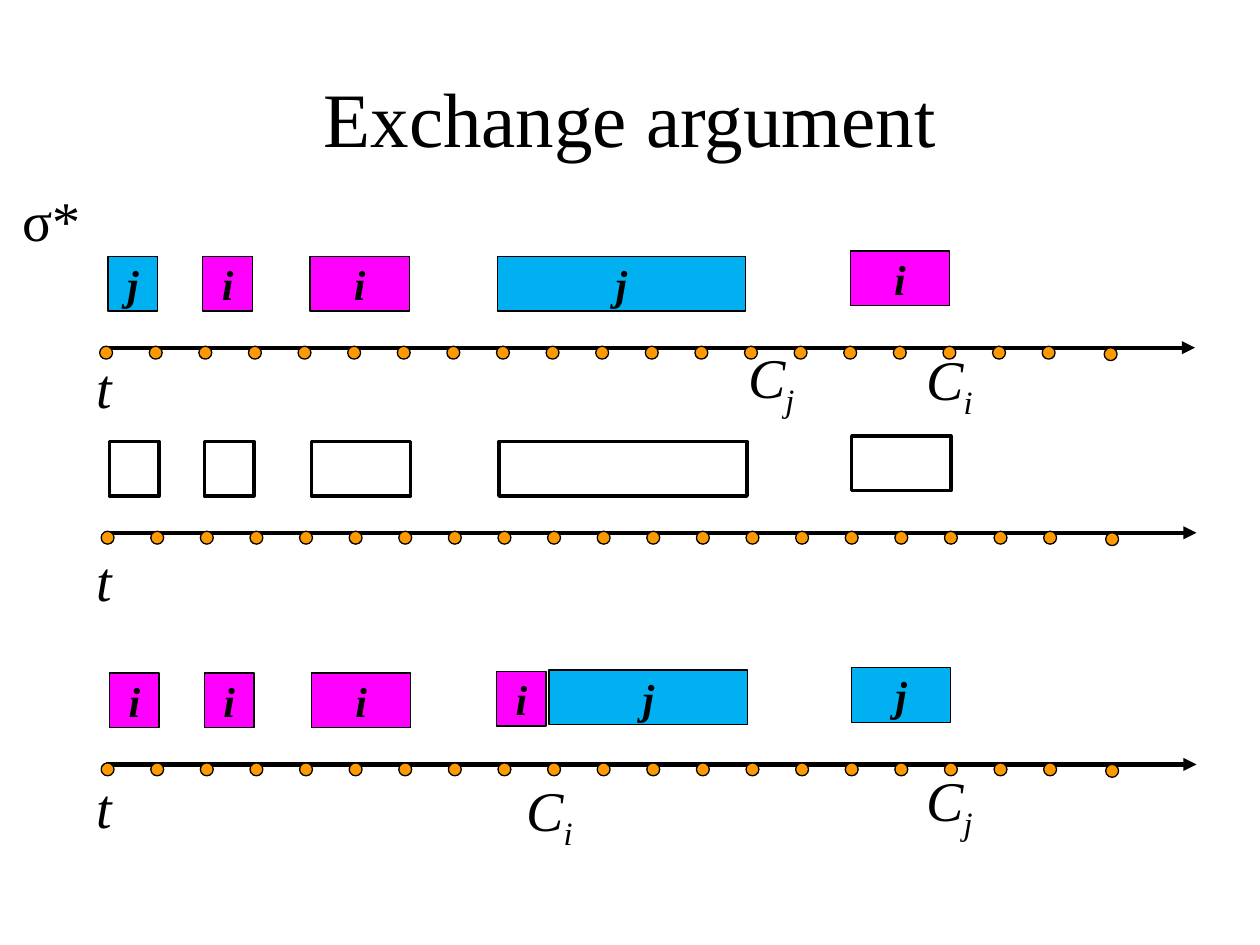
from lxml.etree import SubElement
from pptx import Presentation
from pptx.dml.color import RGBColor
from pptx.enum.shapes import MSO_CONNECTOR as CONNECTOR, MSO_SHAPE as SHAPE
from pptx.enum.text import MSO_ANCHOR as ANCHOR, MSO_AUTO_SIZE as AUTO_SIZE, PP_ALIGN as ALIGN
from pptx.oxml.ns import qn
from pptx.util import Cm, Pt

COLORS = {"ink": "000000", "j": "00B0F0", "i": "FF00FF", "tick": "FF9900"}
FONT = "Times New Roman"
BOX_HEIGHT = 1.1
TICK_SIZE = 0.26
TICK_OFFSETS = [(step, -0.03) for step in range(20)] + [(20.25, 0)]


def color(name):
    """Return the palette colour of the given name."""
    return RGBColor.from_string(COLORS[name])


def write_text(frame, text, size=32, bold=False, italic=False, align=ALIGN.LEFT,
               anchor=ANCHOR.TOP, wrap=False):
    """Write text into a frame, with whatever follows an underscore as a subscript."""
    frame.word_wrap = wrap
    frame.vertical_anchor = anchor
    paragraph = frame.paragraphs[0]
    paragraph.alignment = align
    for position, part in enumerate(text.split("_")):
        run = paragraph.add_run()
        run.text = part
        font = run.font
        font.name, font.size = FONT, Pt(size)
        font.bold, font.italic = bold, italic
        font.color.rgb = color("ink")
        if position:
            font._element.set("baseline", "-25000")


def add_label(slide, text, left, top, width, italic=True):
    """Add a text box that fits its single line."""
    box = slide.shapes.add_textbox(Cm(left), Cm(top), Cm(width), Cm(1.62))
    write_text(box.text_frame, text, italic=italic)
    box.text_frame.auto_size = AUTO_SIZE.SHAPE_TO_FIT_TEXT


def add_outlined(slide, kind, left, top, width, height, fill=None, line=0.75):
    """Add a black-outlined shape, hollow unless a fill is named."""
    shape = slide.shapes.add_shape(kind, Cm(left), Cm(top), Cm(width), Cm(height))
    shape.shadow.inherit = False
    if fill:
        shape.fill.solid()
        shape.fill.fore_color.rgb = color(fill)
    else:
        shape.fill.background()
    shape.line.color.rgb = color("ink")
    shape.line.width = Pt(line)
    return shape


def add_axis(slide, left, top, length):
    """Add the time arrow with its ticks."""
    axis = slide.shapes.add_connector(
        CONNECTOR.STRAIGHT, Cm(left), Cm(top), Cm(left + length), Cm(top))
    axis.line.color.rgb = color("ink")
    axis.line.width = Pt(2.5)
    SubElement(axis.line._get_or_add_ln(), qn("a:tailEnd"), type="triangle")
    SubElement(axis._element.spPr, qn("a:effectLst"))
    for across, down in TICK_OFFSETS:
        add_outlined(slide, SHAPE.OVAL, left - 0.1 + across, top + down,
                     TICK_SIZE, TICK_SIZE, fill="tick")


def add_schedule(slide, left, top, length, jobs, labels):
    """Add one schedule: its axis, job boxes and labels, placed from the axis start."""
    add_axis(slide, left, top, length)
    for job, across, rise, width in jobs:
        box = add_outlined(slide, SHAPE.RECTANGLE, left + across, top - rise, width,
                           BOX_HEIGHT, fill=job, line=0.75 if job else 2)
        if job:
            write_text(box.text_frame, job, size=24, bold=True, italic=True,
                       align=ALIGN.CENTER, anchor=ANCHOR.MIDDLE)
    for text, across, down in labels:
        add_label(slide, text, left + across, top + down, 1.47 if "_" in text else 0.84)


def add_title(slide, text, left, top, width, height):
    """Place and format the title placeholder."""
    title = slide.shapes.title
    title.left, title.top, title.width, title.height = map(Cm, (left, top, width, height))
    write_text(title.text_frame, text, size=44, align=ALIGN.CENTER,
               anchor=ANCHOR.MIDDLE, wrap=True)


def main():
    """Build and save the slide."""
    presentation = Presentation()
    presentation.slide_width, presentation.slide_height = Cm(25.4), Cm(19.05)
    slide = presentation.slides.add_slide(presentation.slide_layouts[5])
    add_title(slide, "Exchange argument", 1.27, 0.76, 22.86, 3.18)
    add_label(slide, "σ*", 0.2, 3.61, 1.78, italic=False)

    slots = [(0.07, 1.84, 1), (1.98, 1.84, 1), (4.14, 1.84, 2),
             (7.92, 1.84, 5), (15.03, 1.95, 2)]
    optimal = [(job, *slot) for job, slot in zip("jiiji", slots)]
    empty = [(None, *slot) for slot in slots]
    exchanged = [(job, *slot) for job, slot in zip("iii", slots)]
    exchanged += [("i", 7.87, 1.87, 1), ("j", 8.93, 1.9, 4), ("j", *slots[-1])]

    add_schedule(slide, 2.11, 7.01, 21.98, optimal,
                 [("t", -0.41, -0.03), ("C_j", 12.72, -0.23), ("C_i", 16.31, -0.18)])
    add_schedule(slide, 2.14, 10.74, 21.98, empty, [("t", -0.44, 0.13)])
    add_schedule(slide, 2.14, 15.41, 21.98, exchanged,
                 [("t", -0.44, 0.03), ("C_j", 16.28, -0.1), ("C_i", 8.22, 0.1)])
    presentation.save("out.pptx")


if __name__ == "__main__":
    main()
